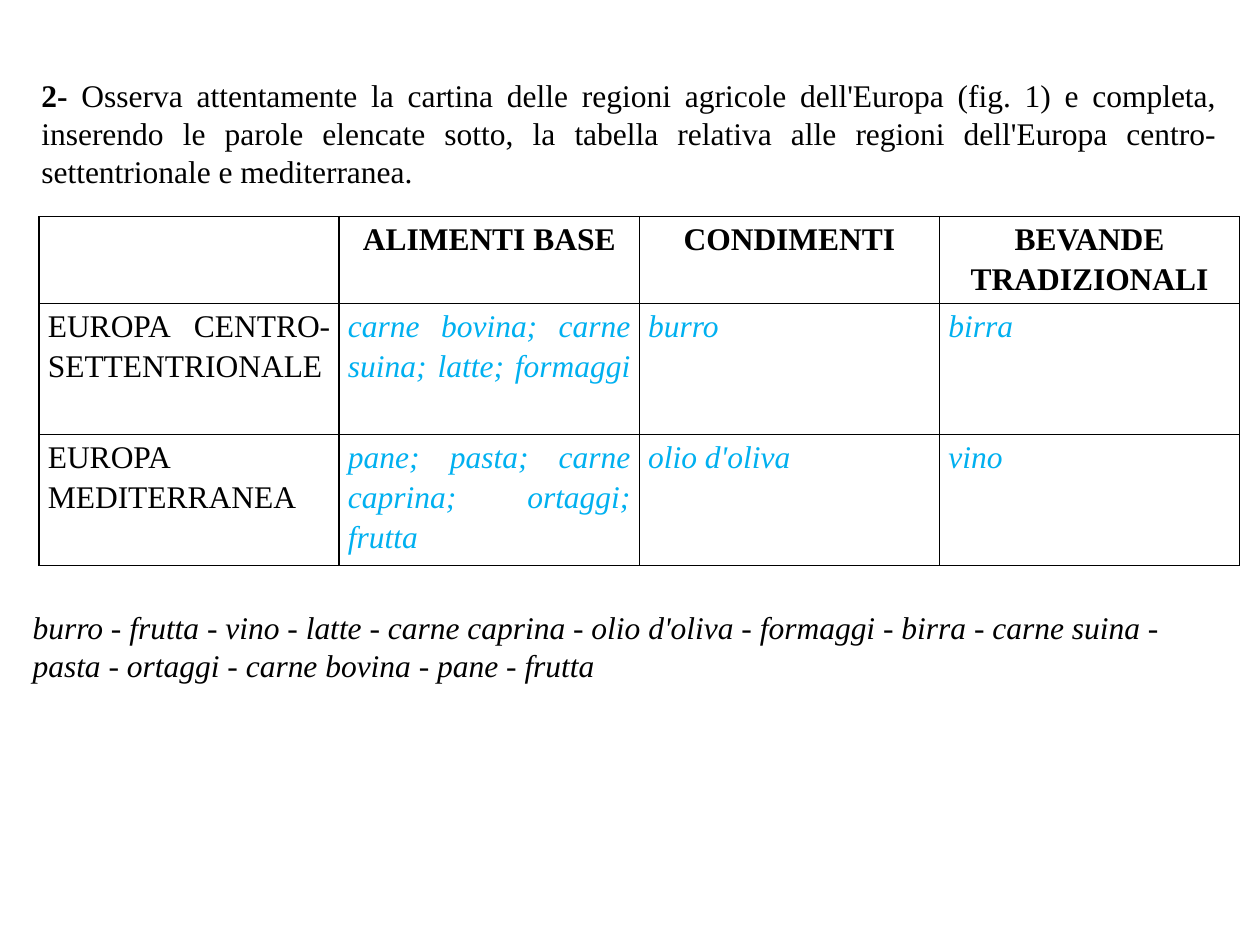
from dataclasses import dataclass

import pptx
import pptx.dml.color
import pptx.enum.text
import pptx.oxml
import pptx.oxml.ns
import pptx.util
from pptx.util import Inches

Align = pptx.enum.text.PP_ALIGN


@dataclass(frozen=True)
class Theme:
    font: str = "Times New Roman"
    size: int = 18
    ink: str = "000000"
    answer: str = "00B0F0"
    paper: str = "FFFFFF"
    border: int = 1


THEME = Theme()
INSTRUCTION = (
    "Osserva attentamente la cartina delle regioni agricole dell'Europa (fig. 1) "
    "e completa, inserendo le parole elencate sotto, la tabella relativa alle "
    "regioni dell'Europa centro-settentrionale e mediterranea."
)
WORDS = [
    "burro", "frutta", "vino", "latte", "carne caprina", "olio d'oliva", "formaggi",
    "birra", "carne suina", "pasta", "ortaggi", "carne bovina", "pane", "frutta",
]
FOODS = [
    ["", "ALIMENTI BASE", "CONDIMENTI", "BEVANDE TRADIZIONALI"],
    ["EUROPA CENTRO-SETTENTRIONALE", "carne bovina; carne suina; latte; formaggi ",
     "burro", "birra"],
    ["EUROPA MEDITERRANEA", "pane; pasta; carne caprina; ortaggi; frutta",
     "olio d'oliva", "vino"],
]
ROW_HEIGHTS = [0.69, 1.04, 1.04]


def set_all(target, values):
    for name, value in values.items():
        setattr(target, name, value)


def add_span(para, text, color=THEME.ink, **styles):
    span = para.add_run()
    span.text = text
    set_all(span.font, {"name": THEME.font, "size": pptx.util.Pt(THEME.size), **styles})
    span.font.color.rgb = pptx.dml.color.RGBColor.from_string(color)


def add_text(page, box, align, spans):
    """Place one paragraph made of (text, styles) spans in a text box."""
    frame = page.shapes.add_textbox(*map(Inches, box)).text_frame
    set_all(frame, {"word_wrap": True,
                    "vertical_anchor": pptx.enum.text.MSO_ANCHOR.MIDDLE})
    para = frame.paragraphs[0]
    para.alignment = align
    for text, styles in spans:
        add_span(para, text, **styles)


def add_borders(cell):
    properties = cell._tc.get_or_add_tcPr()
    for index, side in enumerate(("lnL", "lnR", "lnT", "lnB")):
        properties.insert(index, pptx.oxml.parse_xml(
            f'<a:{side} {pptx.oxml.ns.nsdecls("a")} w="{pptx.util.Pt(THEME.border)}">'
            f'<a:solidFill><a:srgbClr val="{THEME.ink}"/></a:solidFill></a:{side}>'))


def fill_cell(cell, text, align, **styles):
    set_all(cell, {"margin_left": Inches(0.07), "margin_right": Inches(0.07),
                   "margin_top": 0, "margin_bottom": 0})
    cell.fill.solid()
    cell.fill.fore_color.rgb = pptx.dml.color.RGBColor.from_string(THEME.paper)
    add_borders(cell)
    if text:
        para = cell.text_frame.paragraphs[0]
        set_all(para, {"alignment": align, "line_spacing": 1.15,
                       "space_after": pptx.util.Pt(10)})
        add_span(para, text, **styles)


def add_food_table(page, box):
    table = page.shapes.add_table(len(FOODS), len(FOODS[0]), *map(Inches, box)).table
    set_all(table, {"first_row": False, "horz_banding": False})
    for row, height in zip(table.rows, ROW_HEIGHTS):
        row.height = Inches(height)
    for r, texts in enumerate(FOODS):
        for c, text in enumerate(texts):
            if r == 0:
                styles = {"align": Align.CENTER, "bold": True}
            elif c == 0:
                styles = {"align": Align.JUSTIFY}
            else:
                styles = {"align": Align.JUSTIFY, "italic": True, "color": THEME.answer}
            fill_cell(table.cell(r, c), text, **styles)


def main():
    deck = pptx.Presentation()
    set_all(deck, {"slide_width": Inches(10), "slide_height": Inches(7.5)})
    page = deck.slides.add_slide(deck.slide_layouts[6])
    add_text(page, (0.23, 0.55, 9.53, 1.01), Align.JUSTIFY,
             [("2- ", {"bold": True}), (INSTRUCTION, {})])
    add_food_table(page, (0.31, 1.72, 9.53, sum(ROW_HEIGHTS)))
    add_text(page, (0.16, 4.77, 9.69, 0.71), Align.LEFT,
             [(" - ".join(WORDS), {"italic": True})])
    deck.save("out.pptx")


if __name__ == "__main__":
    main()
